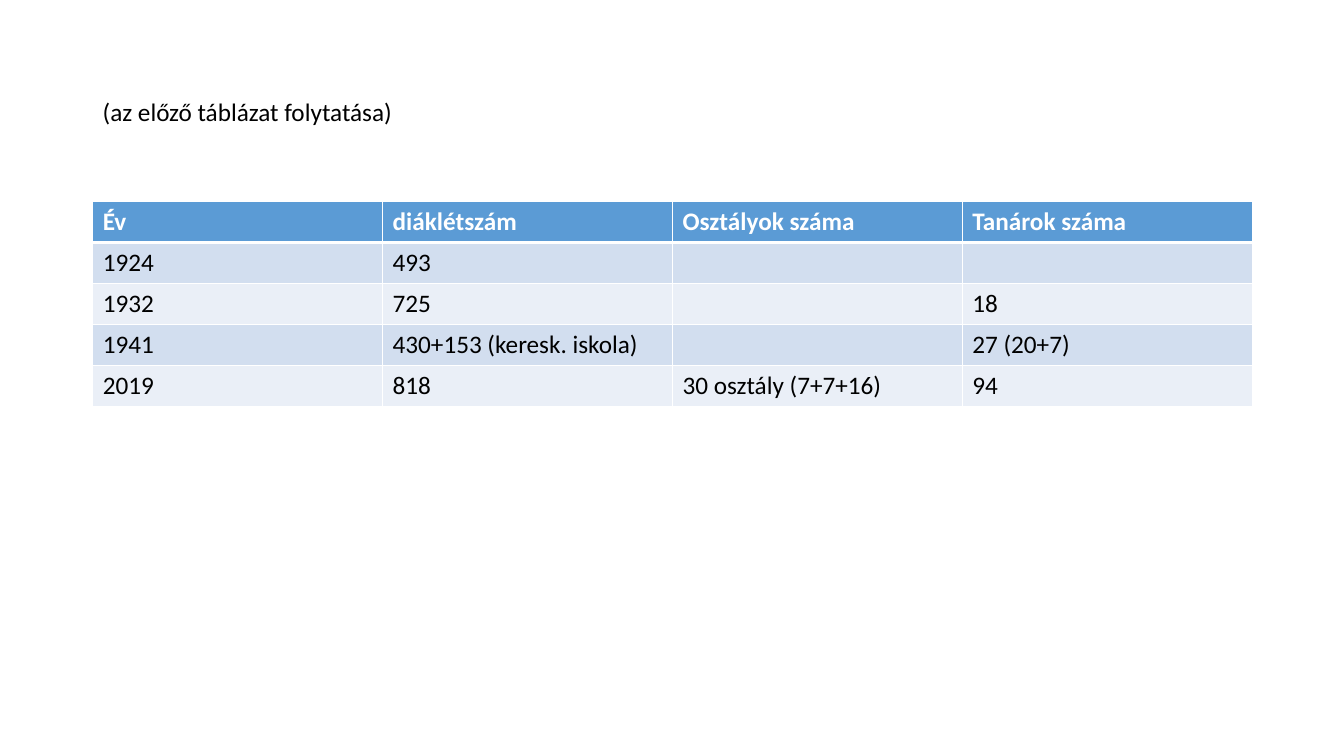
from lxml import etree
from pptx import Presentation
from pptx.dml.color import RGBColor
from pptx.enum.text import MSO_ANCHOR
from pptx.oxml.ns import qn
from pptx.util import Inches, Pt

MIDDLE = MSO_ANCHOR.MIDDLE
HEX = {"head": "5B9BD5", "odd": "D2DEEF", "even": "EAEFF7",
       "white": "FFFFFF", "black": "000000"}
FONT = {"name": "Calibri", "size": Pt(18)}

TITLE = "(az előző táblázat folytatása)"
ROWS = [
    ("Év", "diáklétszám", "Osztályok száma", "Tanárok száma"),
    ("1924", "493", "", ""),
    ("1932", "725", "", "18"),
    ("1941", "430+153 (keresk. iskola)", "", "27 (20+7)"),
    ("2019", "818", "30 osztály (7+7+16)", "94"),
]


def write(para, text, tone, bold=False):
    run = para.add_run()
    run.text = text
    for key, value in {**FONT, "bold": bold}.items():
        setattr(run.font, key, value)
    run.font.color.rgb = RGBColor.from_string(HEX[tone])


def edge(cell, sides):
    """Draw white cell borders; sides maps a tag to a width in points."""
    props = cell._tc.get_or_add_tcPr()
    for tag, width in sides.items():
        line = etree.SubElement(props, qn(f"a:{tag}"), w=str(Pt(width)))
        fill = etree.SubElement(line, qn("a:solidFill"))
        etree.SubElement(fill, qn("a:srgbClr"), val=HEX["white"])


def add_title(slide, left, top, width, height):
    box = slide.shapes.add_textbox(
        Inches(left), Inches(top), Inches(width), Inches(height))
    frame = box.text_frame
    frame.word_wrap = True
    frame.vertical_anchor = MIDDLE
    para = frame.paragraphs[0]
    para.line_spacing = 0.9
    write(para, TITLE, "black")


def add_grid(slide, left, top, width, height):
    grid = slide.shapes.add_table(
        len(ROWS), len(ROWS[0]),
        Inches(left), Inches(top), Inches(width), Inches(height)).table
    for r, row in enumerate(ROWS):
        head = r == 0
        tone = "head" if head else "odd" if r % 2 else "even"
        for c, text in enumerate(row):
            cell = grid.cell(r, c)
            # The rule under the header is heavier
            edge(cell, {"lnL": 1, "lnR": 1, "lnT": 3 if r == 1 else 1,
                        "lnB": 3 if head else 1})
            cell.fill.solid()
            cell.fill.fore_color.rgb = RGBColor.from_string(HEX[tone])
            if text:
                write(cell.text_frame.paragraphs[0], text,
                      "white" if head else "black", head)


def main():
    deck = Presentation()
    deck.slide_width, deck.slide_height = Inches(13.33), Inches(7.5)
    slide = deck.slides.add_slide(deck.slide_layouts[6])
    # Title above, table below, on the same margins
    left, width = 0.92, 11.5
    add_title(slide, left, 0.4, width, 1.45)
    add_grid(slide, left, 2, width, 2.03)
    deck.save("out.pptx")


if __name__ == "__main__":
    main()
